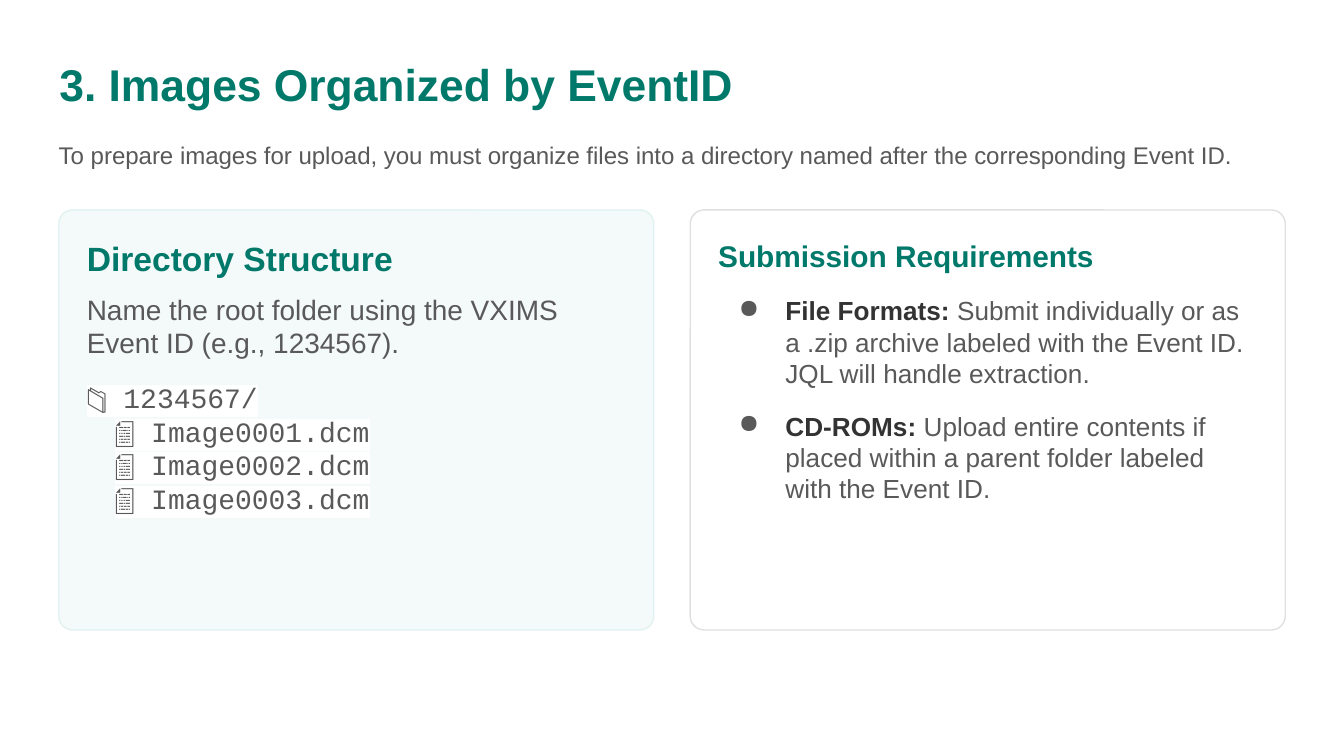
from lxml import etree
from pptx import Presentation
from pptx.dml.color import RGBColor
from pptx.enum.shapes import MSO_SHAPE
from pptx.enum.text import MSO_ANCHOR
from pptx.oxml.ns import qn
from pptx.util import Pt

ROUND = MSO_SHAPE.ROUNDED_RECTANGLE
TOP, MIDDLE = MSO_ANCHOR.TOP, MSO_ANCHOR.MIDDLE
GREEN, GREY, DARK, WHITE = "00796B", "595959", "333333", "FFFFFF"
CARD_TOP, CARD_WIDTH, CARD_HEIGHT = 112.5, 318.75, 225
FILES = ["Image0001.dcm", "Image0002.dcm", "Image0003.dcm"]
RULES = [
    ("File Formats:", " Submit individually or as a .zip archive labeled with the "
     "Event ID. JQL will handle extraction."),
    ("CD-ROMs:", " Upload entire contents if placed within a parent folder labeled "
     "with the Event ID."),
]


def color(code):
    """Turn a hex string into a colour."""
    return RGBColor.from_string(code)


def add_box(slide, left, top, width, height, inset=0, anchor=TOP):
    """Add a wrapping text box and return its frame."""
    box = slide.shapes.add_textbox(Pt(left), Pt(top), Pt(width), Pt(height))
    frame = box.text_frame
    frame.word_wrap = True
    frame.vertical_anchor = anchor
    frame.margin_left = frame.margin_right = Pt(inset)
    frame.margin_top = frame.margin_bottom = Pt(inset)
    return frame


def add_run(para, text, size, code, bold=False, font="Arial"):
    """Add one styled run to a paragraph."""
    run = para.add_run()
    run.text = text
    run.font.size = Pt(size)
    run.font.name = font
    run.font.bold = bold
    run.font.color.rgb = color(code)
    return run


def add_para(frame, before=0, left=0, hang=0):
    """Add a paragraph with its spacing and indents."""
    para = frame.add_paragraph()
    para.space_before = Pt(before)
    props = para._p.get_or_add_pPr()
    props.set("marL", str(Pt(left)))
    props.set("indent", str(Pt(-hang)))
    return para


def add_bullet(para, code):
    """Give a paragraph a round bullet of its own colour."""
    props = para._p.get_or_add_pPr()
    tint = etree.SubElement(props, qn("a:buClr"))
    etree.SubElement(tint, qn("a:srgbClr")).set("val", code)
    etree.SubElement(props, qn("a:buChar")).set("char", "●")


def add_code(para, text):
    """Add a monospaced run on a white highlight."""
    run = add_run(para, text, 15, GREY, font="Courier New")
    mark = etree.Element(qn("a:highlight"))
    etree.SubElement(mark, qn("a:srgbClr")).set("val", WHITE)
    run._r.rPr.find(qn("a:solidFill")).addnext(mark)


def add_card(slide, left, fill, line, title, size):
    """Draw a rounded card with a heading and return its text frame."""
    area = (left, CARD_TOP, CARD_WIDTH, CARD_HEIGHT)
    card = slide.shapes.add_shape(ROUND, *map(Pt, area))
    card.adjustments[0] = 0.033
    card.shadow.inherit = False
    card.fill.solid()
    card.fill.fore_color.rgb = color(fill)
    card.line.color.rgb = color(line)
    card.line.width = Pt(0.75)
    frame = add_box(slide, *area, inset=15)
    add_run(frame.paragraphs[0], title, size, GREEN, bold=True)
    return frame


def add_folder(slide):
    """Add the card with the folder listing."""
    frame = add_card(slide, 31.5, "F4F9F9", "E0F2F1", "Directory Structure", 18)
    add_run(add_para(frame, 7.5),
            "Name the root folder using the VXIMS Event ID (e.g., 1234567).", 15, GREY)
    add_code(add_para(frame, 11.25), "📁 1234567/")
    for name in FILES:
        add_code(add_para(frame, left=15), f"📄 {name}")


def add_rules(slide):
    """Add the card with the submission rules."""
    frame = add_card(slide, 369.75, WHITE, "E0E0E0", "Submission Requirements", 16)
    for label, text in RULES:
        para = add_para(frame, 11.25, left=36, hang=25)
        add_bullet(para, GREY)
        add_run(para, label, 14, DARK, bold=True)
        add_run(para, text, 14, GREY)


def main():
    """Build and save the slide."""
    deck = Presentation()
    deck.slide_width, deck.slide_height = Pt(720), Pt(405)
    slide = deck.slides.add_slide(deck.slide_layouts[6])
    title = add_box(slide, 24.75, 22.5, 671, 45, inset=7.2, anchor=MIDDLE)
    add_run(title.paragraphs[0], "3. Images Organized by EventID", 23.8, GREEN, bold=True)
    intro = add_box(slide, 31.5, 75, 657, 30)
    add_run(intro.paragraphs[0],
            "To prepare images for upload, you must organize files into a directory "
            "named after the corresponding Event ID.", 12.9, GREY)
    add_folder(slide)
    add_rules(slide)
    deck.save("out.pptx")


if __name__ == "__main__":
    main()
